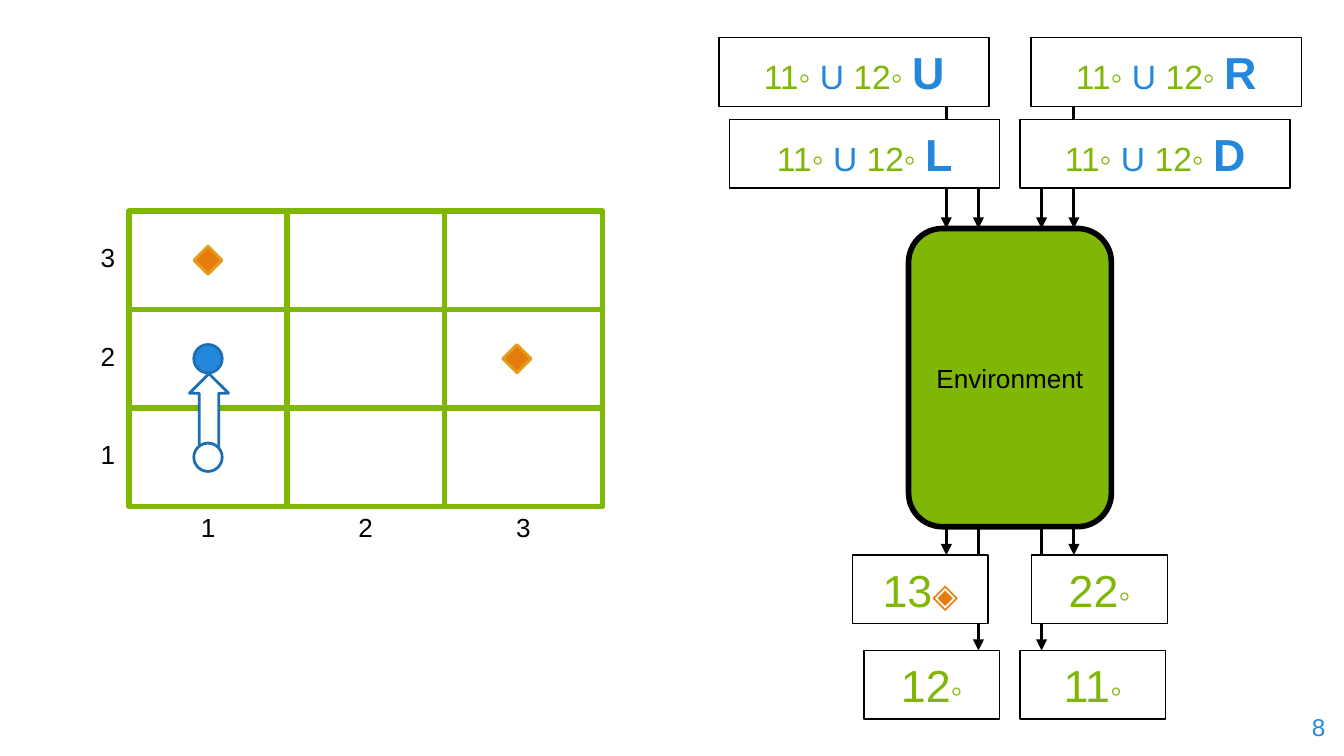
from lxml import etree
from pptx import Presentation
from pptx.dml.color import RGBColor
from pptx.enum.shapes import MSO_CONNECTOR, MSO_SHAPE
from pptx.enum.text import MSO_ANCHOR, PP_ALIGN
from pptx.oxml.ns import qn
from pptx.util import Pt

RECT, ROUND = MSO_SHAPE.RECTANGLE, MSO_SHAPE.ROUNDED_RECTANGLE
OVAL, GEM, RISE = MSO_SHAPE.OVAL, MSO_SHAPE.DIAMOND, MSO_SHAPE.UP_ARROW
CENTER, RIGHT, MIDDLE = PP_ALIGN.CENTER, PP_ALIGN.RIGHT, MSO_ANCHOR.MIDDLE
STRAIGHT = MSO_CONNECTOR.STRAIGHT

GREEN, BLUE, NAVY = "80B606", "2388DB", "1D6FB2"
ORANGE, GOLD, BLACK, WHITE = "E67C0B", "E29F1D", "000000", "FFFFFF"
FONT = "Arial"

# x, start y, end y
ARROWS = [
    (507, 57, 122.4), (575.3, 57, 122.4), (524.2, 101, 122.4), (558, 101, 122.4),
    (507, 282.2, 297.4), (575.3, 282.2, 297.4), (524.2, 282.2, 348.5), (558, 282.2, 348.5),
]
# x, y, move
MOVES = [(385.2, 20.2, "U"), (390.9, 64, "L"), (546.5, 64, "D"), (552.4, 20.2, "R")]
# x, y, width, cell, mark, mark colour
STATES = [
    (462.8, 348.5, 72.7, "12", "◦", GREEN), (456.7, 297.4, 72.7, "13", "◈", ORANGE),
    (552.7, 297.4, 72.7, "22", "◦", GREEN), (546.5, 348.5, 77.8, "11", "◦", GREEN),
]
LEFT, TOP, WIDE, HIGH, TALL = 69.2, 113, 84.5, 52.8, 36.7
# shape, column, row from top, x shift, fill, line
TOKENS = [
    (OVAL, 0, 1, 0, BLUE, NAVY), (OVAL, 0, 2, 0, WHITE, NAVY),
    (GEM, 0, 0, 0, ORANGE, GOLD), (GEM, 2, 1, -3.5, ORANGE, GOLD),
]
SIZE = 15.2


def color(code):
    return RGBColor.from_string(code)


def write(shape, runs, align=CENTER):
    frame = shape.text_frame
    frame.word_wrap = True
    frame.vertical_anchor = MIDDLE
    frame.margin_left = frame.margin_right = Pt(7.2)
    frame.margin_top = frame.margin_bottom = Pt(7.2)
    para = frame.paragraphs[0]
    para.alignment = align
    for text, size, code, bold in runs:
        run = para.add_run()
        run.text = text
        run.font.name, run.font.size, run.font.bold = FONT, Pt(size), bold
        run.font.color.rgb = color(code)


def draw(slide, kind, box, fill, line, width, runs=()):
    shape = slide.shapes.add_shape(kind, *map(Pt, box))
    shape.shadow.inherit = False
    shape.fill.solid()
    shape.fill.fore_color.rgb = color(fill)
    shape.line.color.rgb = color(line)
    shape.line.width = Pt(width)
    if runs:
        write(shape, runs)


def label(slide, box, text, size=14, code=BLACK, align=CENTER):
    write(slide.shapes.add_textbox(*map(Pt, box)), [(text, size, code, False)], align)


def arrow(slide, x, start, end):
    line = slide.shapes.add_connector(STRAIGHT, Pt(x), Pt(start), Pt(x), Pt(end))
    line.line.color.rgb = color(BLACK)
    line.line.width = Pt(1.5)
    etree.SubElement(line.line._get_or_add_ln(), qn("a:tailEnd"), type="triangle")
    etree.SubElement(line._element.spPr, qn("a:effectLst"))


def main():
    """Build the slide of a grid world and its environment."""
    deck = Presentation()
    deck.slide_width, deck.slide_height = Pt(720), Pt(405)
    slide = deck.slides.add_slide(deck.slide_layouts[6])

    for item in ARROWS:
        arrow(slide, *item)
    for x, y, move in MOVES:
        runs = [("11◦ ", 18, GREEN, False), ("U ", 18, BLUE, False),
                ("12◦ ", 18, GREEN, False), (move, 24, BLUE, True)]
        draw(slide, RECT, (x, y, 144.7, TALL), WHITE, BLACK, 0.75, runs)
    for x, y, width, cell, mark, code in STATES:
        runs = [(cell, 24, GREEN, False), (mark, 18, code, False)]
        draw(slide, RECT, (x, y, width, TALL), WHITE, BLACK, 0.75, runs)
    draw(slide, ROUND, (486.7, 122.4, 108.7, 159.8), GREEN, BLACK, 3,
         [("Environment", 14, BLACK, False)])

    for row in range(3):
        for col in range(3):
            box = (LEFT + col * WIDE, TOP + row * HIGH, WIDE, HIGH)
            draw(slide, RECT, box, WHITE, GREEN, 3)
    draw(slide, RISE, (101.5, 200.2, 20.9, 46), WHITE, NAVY, 1.5)
    for kind, col, row, shift, fill, line in TOKENS:
        x = LEFT + (col + 0.5) * WIDE - SIZE / 2 + shift
        y = TOP + (row + 0.5) * HIGH - SIZE / 2
        draw(slide, kind, (x, y, SIZE, SIZE), fill, line, 1.5)
    for i in range(3):
        label(slide, (LEFT + i * WIDE, 271.4, WIDE, 22.3), str(i + 1))
        label(slide, (46.8, TOP - 1.5 + i * HIGH, 20.9, HIGH), str(3 - i))
    label(slide, (673.9, 373.7, 43.2, 31), "8", 13, BLUE, RIGHT)
    deck.save("out.pptx")


if __name__ == "__main__":
    main()
